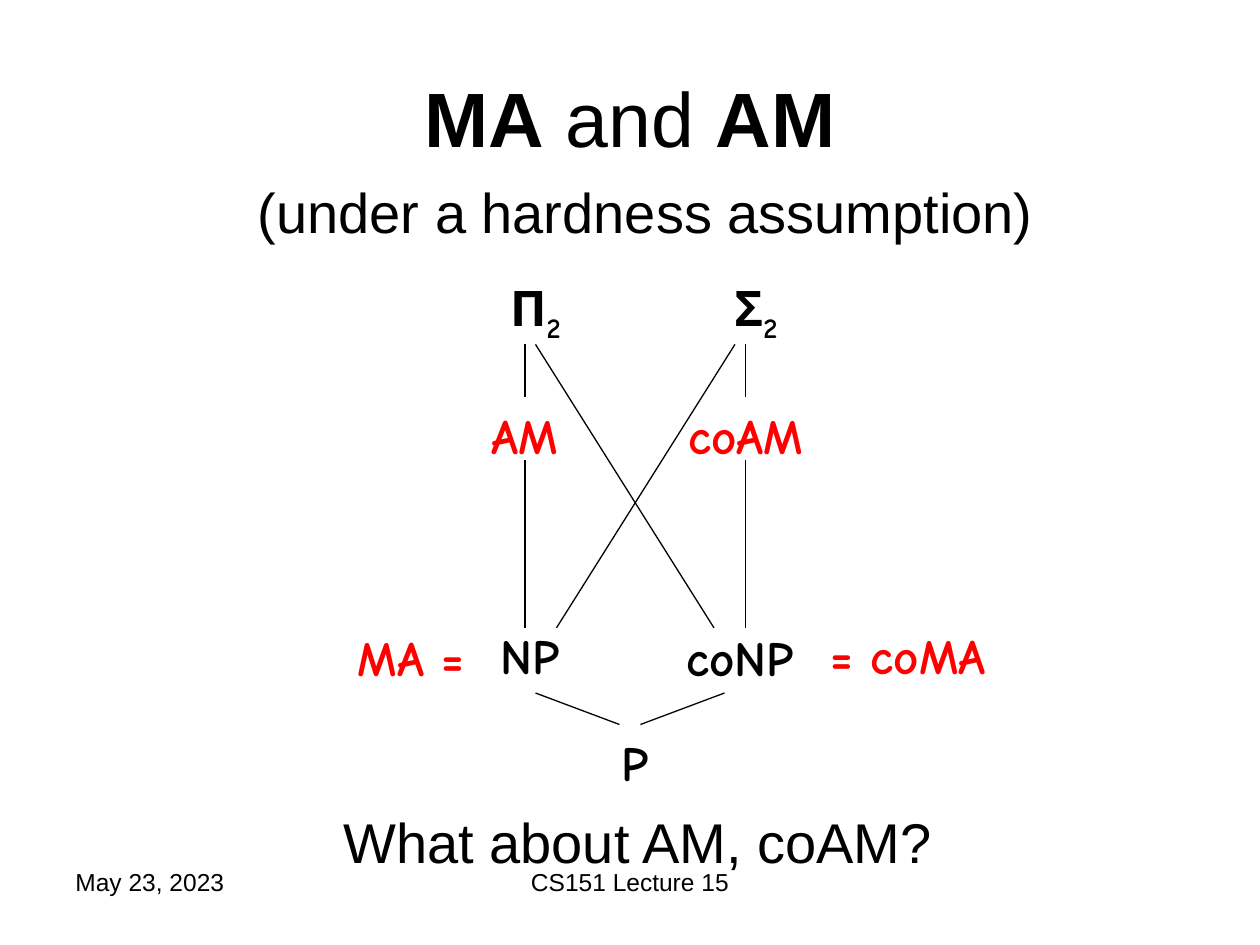
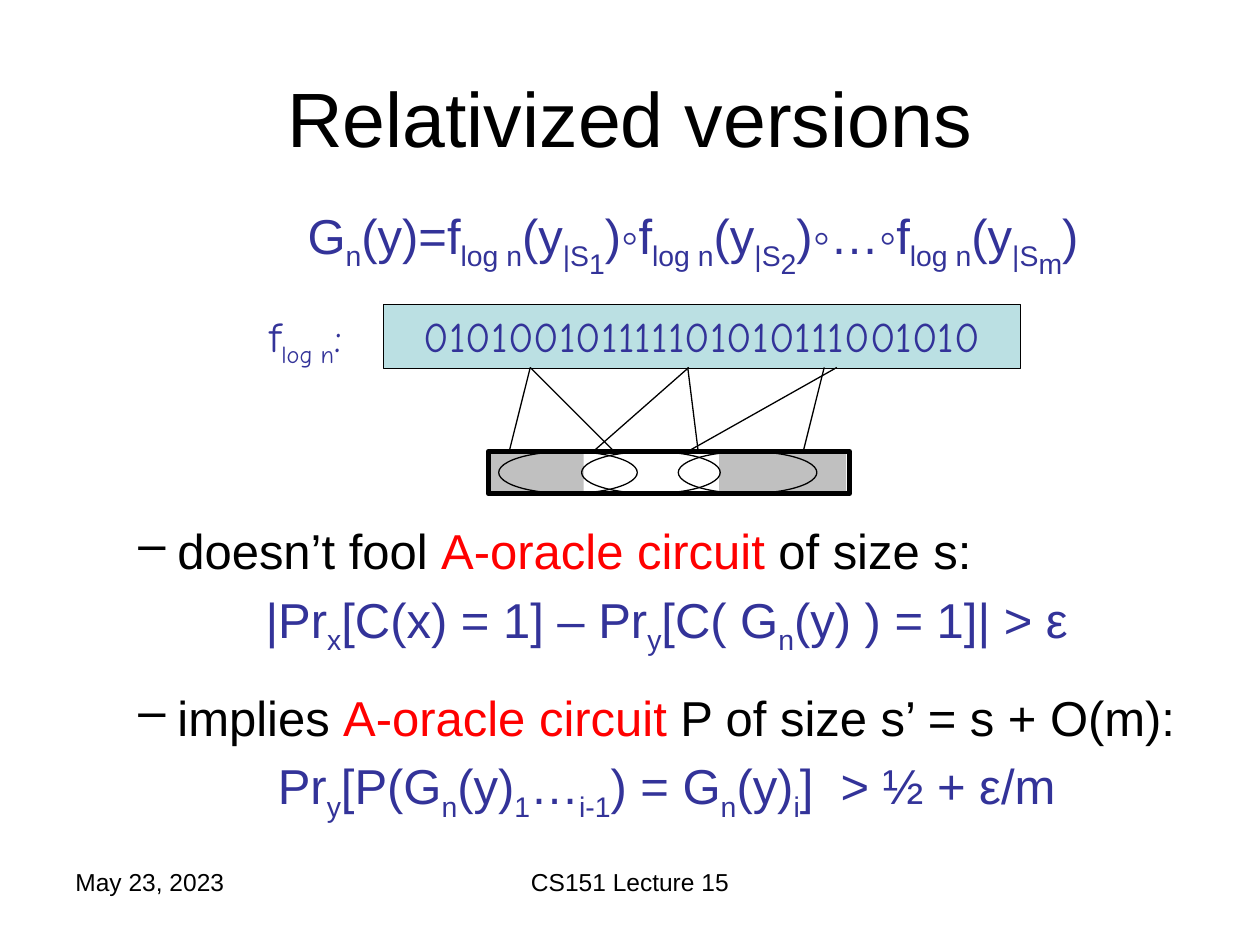
from pptx import Presentation
from pptx.dml.color import RGBColor
from pptx.enum.shapes import MSO_CONNECTOR, MSO_SHAPE as Kind
from pptx.enum.text import MSO_ANCHOR as Anchor, PP_ALIGN as Align
from pptx.oxml.ns import qn
from pptx.util import Inches, Pt
from lxml.etree import SubElement

BLACK, RED, BLUE, GREY, PALE = "000000", "FF0000", "333399", "C0C0C0", "BBE0E3"
SANS, HAND = "Arial", "Comic Neue"
UNIT = Inches(1) / 12
COLS, ROWS = 120, 90
hue = RGBColor.from_string


def put(slide, box, rows=(), size=28, color=BLACK, font=SANS, bold=False,
        align=Align.CENTER, kind=None, fill=None, edge=0):
    area = [round(n * UNIT) for n in box]
    if kind is None:
        shape = slide.shapes.add_textbox(*area)
    else:
        shape = slide.shapes.add_shape(kind, *area)
        shape.shadow.inherit = False
        if fill:
            shape.fill.solid()
            shape.fill.fore_color.rgb = hue(fill)
        else:
            shape.fill.background()
        if edge:
            shape.line.color.rgb = hue(BLACK)
            shape.line.width = Pt(edge)
        else:
            shape.line.fill.background()
    frame = shape.text_frame
    frame.word_wrap = True
    frame.vertical_anchor = Anchor.TOP
    for i, row in enumerate(rows):
        para = frame.add_paragraph() if i else frame.paragraphs[0]
        para.alignment = align
        for part in row.split("~"):
            mark = part[0] if part[0] in "_^*!" else ""
            run = para.add_run()
            run.text = part[len(mark):]
            run.font.size = Pt(size)
            run.font.name = font
            run.font.bold = bold or mark == "*"
            run.font.color.rgb = hue(RED if mark == "!" else color)
            if mark in ("_", "^"):
                drop = "-25000" if mark == "_" else "-40000"
                run.font._element.set("baseline", drop)
    return shape


def join(slide, x1, y1, x2, y2):
    ends = [round(n * UNIT) for n in (x1, y1, x2, y2)]
    line = slide.shapes.add_connector(MSO_CONNECTOR.STRAIGHT, *ends)
    line.line.color.rgb = hue(BLACK)
    line.line.width = Pt(0.75)
    SubElement(line._element.spPr, qn("a:effectLst"))


deck = Presentation()
deck.slide_width = round(COLS * UNIT)
deck.slide_height = round(ROWS * UNIT)
pages = []
for title in ("*MA~ and ~*AM", "Relativized versions"):
    page = deck.slides.add_slide(deck.slide_layouts[6])
    head = put(page, (6, 3.6, 108, 15), [title], 44)
    head.text_frame.vertical_anchor = Anchor.MIDDLE
    put(page, (6, 82, 28, 6.2), ["May 23, 2023"], 14, align=Align.LEFT)
    put(page, (41, 82, 38, 6.2), ["CS151 Lecture 15"], 14)
    pages.append(page)
classes, oracle = pages

for top, text in ((16.3, "(under a hardness assumption)"),
                  (76.3, "What about AM, coAM? ")):
    put(classes, (20, top, 83, 7.7), [text], 32)

nodes = (
    ("Π~_2", 45, 25.8, 12, BLACK), ("Σ~_2", 66, 25.8, 12, BLACK),
    ("AM", 44, 38, 12, RED), ("coAM", 63, 38, 16, RED),
    ("MA = ", 31, 59.2, 18, RED), ("NP", 46, 59, 9, BLACK),
    ("coNP", 63, 59.2, 15, BLACK), ("= coMA", 76, 59, 21, RED),
    ("P", 56, 69.2, 9, BLACK),
)
for text, left, top, width, color in nodes:
    put(classes, (left, top, width, 6.8), [text], color=color, font=HAND, bold=True)

HIGH, LOW, BASE = 32.8, 59.8, 69
for x, stop in ((50, 56), (71, 57)):
    join(classes, x, HIGH, x, 37.8)
    join(classes, x, 43.8, x, stop)
    join(classes, x, 54.8, x, LOW)
for x1, y1, x2, y2 in ((70, HIGH, 53, LOW), (51, HIGH, 68, LOW),
                       (59, BASE, 51, 66), (61, BASE, 69, 66)):
    join(classes, x1, y1, x2, y2)

rule = put(oracle, (20, 19, 92, 7), [
    "G~_n~(y)=f~_log n~(y~_|S~^1~)◦f~_log n~(y~_|S~^2~)◦…◦f~_log n~(y~_|S~^m~)"
], color=BLUE)
rule.text_frame.paragraphs[0].space_before = Pt(4)
put(oracle, (36.5, 29, 60.7, 6.1), ["010100101111101010111001010"], 24, BLUE, HAND,
    kind=Kind.RECTANGLE, fill=PALE, edge=0.75)
put(oracle, (24.5, 29, 12.1, 6), ["f~_log n~:"], 24, BLUE, HAND, align=Align.LEFT)

SEED, TALL = 43, 4
for left, width in ((68.5, 12.1), (46.5, 9.1)):
    put(oracle, (left, SEED, width, TALL), kind=Kind.RECTANGLE, fill=GREY)
put(oracle, (46.5, SEED, 34.4, TALL), kind=Kind.RECTANGLE, edge=3)
for left in (47.5, 55.4, 64.6):
    put(oracle, (left, SEED, 13.2, TALL), kind=Kind.OVAL, edge=0.75)
for top, foot in ((50.5, 48.5), (50.5, 58.5), (65.6, 56.5),
                  (65.5, 66.5), (79.7, 65.5), (78.5, 76.5)):
    join(oracle, top, 35, foot, SEED)

body = put(oracle, (6, 49, 109, 38), [
    "doesn’t fool ~!A-oracle circuit ~of size s:",
    "|Pr~_x~[C(x) = 1] – Pr~_y~[C( G~_n~(y) ) = 1]| > ε",
    "implies ~!A-oracle circuit ~P of size s’ = s + O(m):",
    "Pr~_y~[P(G~_n~(y)~_1~…~_i-1~) = G~_n~(y)~_i~]  > ½ + ε/m",
], align=Align.LEFT)
for i, para in enumerate(body.text_frame.paragraphs):
    para.space_before = Pt(5.6 if i else 4)
    props = para._p.get_or_add_pPr()
    props.set("marL", str(Inches(0.81)))
    props.set("indent", str(-Inches(0.31)))
    if i % 2:
        para.alignment = Align.CENTER
        para.space_after = Pt(12)
        for run in para.runs:
            run.font.color.rgb = hue(BLUE)
    else:
        SubElement(props, qn("a:buChar")).set("char", "–")

deck.save("out.pptx")
